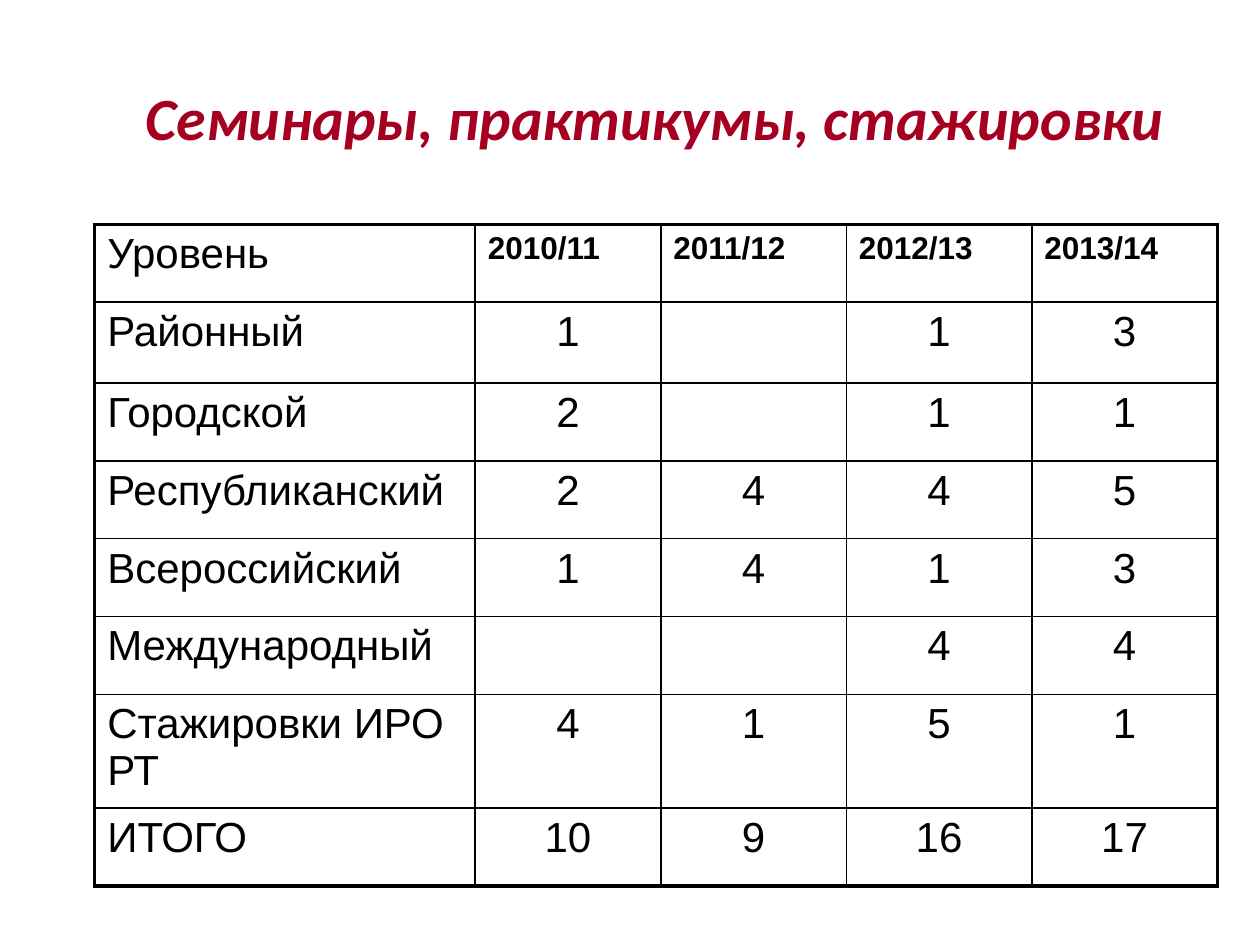
from lxml.etree import SubElement
from pptx import Presentation
from pptx.dml.color import RGBColor
from pptx.enum.text import MSO_ANCHOR, PP_ALIGN
from pptx.oxml.ns import qn
from pptx.util import Cm, Pt

# Content
TITLE = "Семинары, практикумы, стажировки "
ROWS = [
    ("Уровень", "2010/11", "2011/12", "2012/13", "2013/14"),
    ("Районный", "1", "", "1", "3"),
    ("Городской", "2", "", "1", "1"),
    ("Республиканский", "2", "4", "4", "5"),
    ("Всероссийский", "1", "4", "1", "3"),
    ("Международный", "", "", "4", "4"),
    ("Стажировки ИРО РТ", "4", "1", "5", "1"),
    ("ИТОГО", "10", "9", "16", "17"),
]

# Formats
COLORS = {"title": "A50021", "text": "000000", "border": "000000"}
TITLE_FONT = {"name": "Calibri", "size": Pt(34.2), "bold": True, "italic": True}
LABEL_FONT = {"name": "Arial", "size": Pt(24), "bold": False}
YEAR_FONT = {"name": "Arial", "size": Pt(18), "bold": True}
OUTER_BORDER, INNER_BORDER = Pt(2.25), Pt(1)

# Layout
TITLE_BOX = (Cm(2.54), Cm(0.76), Cm(21.59), Cm(3.18))
TABLE_LEFT, TABLE_TOP = Cm(1.91), Cm(4.52)
LABEL_WIDTH, YEAR_WIDTH = Cm(7.67), Cm(3.74)
ROW_HEIGHT, FIRST_LEVEL_HEIGHT = Cm(1.57), Cm(1.63)


def write(paragraph, text, font_format, color, alignment):
    paragraph.alignment = alignment
    run = paragraph.add_run()
    run.text = text
    for name, value in font_format.items():
        setattr(run.font, name, value)
    run.font.color.rgb = RGBColor.from_string(COLORS[color])


def add_border(cell, side, width):
    line = SubElement(cell._tc.get_or_add_tcPr(), qn(f"a:ln{side}"), w=str(width))
    fill = SubElement(line, qn("a:solidFill"))
    SubElement(fill, qn("a:srgbClr"), val=COLORS["border"])


def add_title(slide):
    frame = slide.shapes.add_textbox(*TITLE_BOX).text_frame
    frame.word_wrap = True
    frame.vertical_anchor = MSO_ANCHOR.MIDDLE
    write(frame.paragraphs[0], TITLE, TITLE_FONT, "title", PP_ALIGN.CENTER)


def add_level_table(slide):
    widths = [LABEL_WIDTH] + [YEAR_WIDTH] * (len(ROWS[0]) - 1)
    heights = [ROW_HEIGHT] * len(ROWS)
    heights[1] = FIRST_LEVEL_HEIGHT
    table = slide.shapes.add_table(
        len(ROWS), len(widths), TABLE_LEFT, TABLE_TOP, sum(widths), sum(heights)
    ).table
    table.first_row = table.horz_banding = False
    for column, width in zip(table.columns, widths):
        column.width = width
    for row, height in zip(table.rows, heights):
        row.height = height

    last_row, last_column = len(ROWS) - 1, len(widths) - 1
    for r, values in enumerate(ROWS):
        for c, text in enumerate(values):
            cell = table.cell(r, c)
            # Thick frame around the table, thin lines inside
            on_edge = {"L": c == 0, "R": c == last_column, "T": r == 0, "B": r == last_row}
            for side, outer in on_edge.items():
                add_border(cell, side, OUTER_BORDER if outer else INNER_BORDER)
            cell.fill.background()
            # Counts are centred, labels and years start at the left
            if text:
                font_format = YEAR_FONT if r == 0 and c > 0 else LABEL_FONT
                alignment = PP_ALIGN.CENTER if r > 0 and c > 0 else PP_ALIGN.LEFT
                write(cell.text_frame.paragraphs[0], text, font_format, "text", alignment)


def main():
    presentation = Presentation()
    presentation.slide_width, presentation.slide_height = Cm(25.4), Cm(19.05)
    slide = presentation.slides.add_slide(presentation.slide_layouts[6])
    add_title(slide)
    add_level_table(slide)
    presentation.save("out.pptx")


if __name__ == "__main__":
    main()
